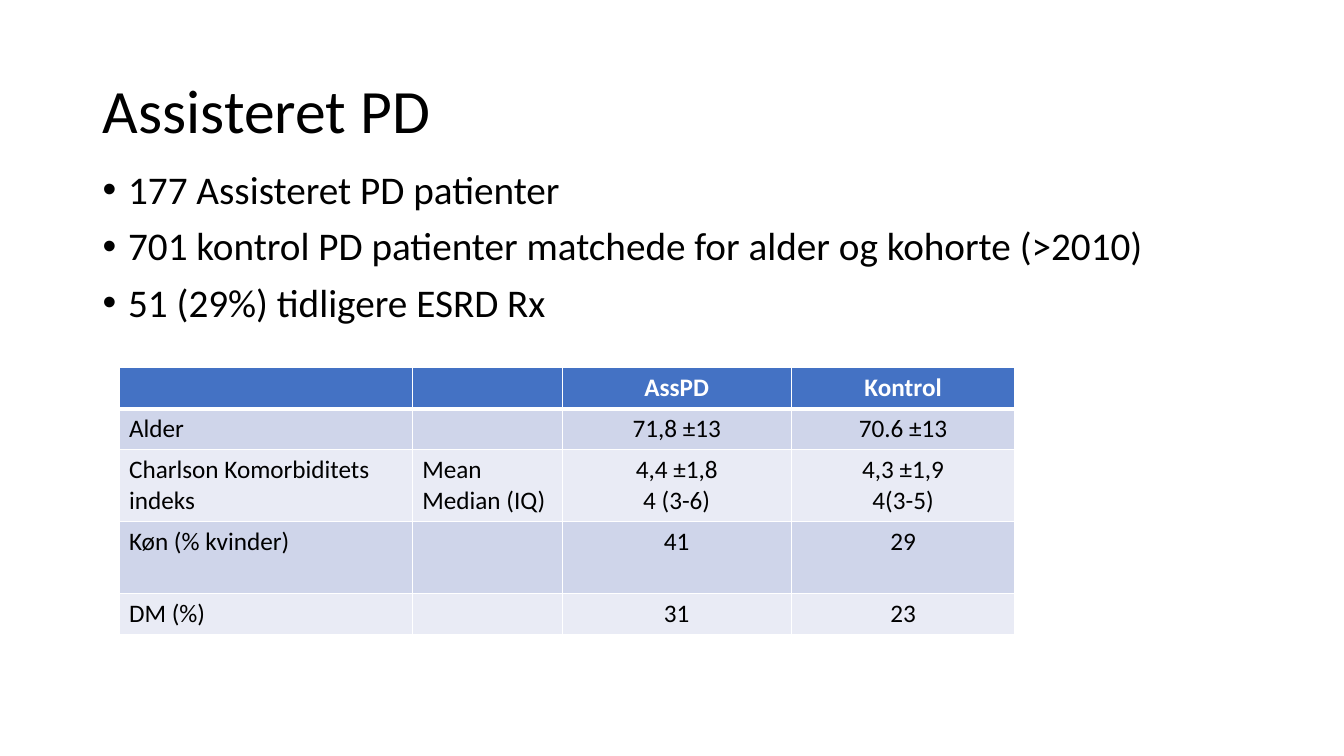
import lxml.etree
import pptx
import pptx.dml.color
import pptx.enum.text
import pptx.oxml.ns
import pptx.util

Cm = pptx.util.Cm
Pt = pptx.util.Pt
qn = pptx.oxml.ns.qn
Align = pptx.enum.text.PP_ALIGN
Anchor = pptx.enum.text.MSO_ANCHOR
SubElement = lxml.etree.SubElement

POINTS = [
    "177 Assisteret PD patienter",
    "701 kontrol PD patienter matchede for alder og kohorte (>2010)",
    "51 (29%) tidligere ESRD Rx",
]
ROWS = [
    ["", "", "AssPD", "Kontrol"],
    ["Alder", "", "71,8 ±13", "70.6 ±13"],
    ["Charlson Komorbiditets\nindeks", "Mean\nMedian (IQ)",
     "4,4 ±1,8\n4 (3-6)", "4,3 ±1,9\n4(3-5)"],
    ["Køn (% kvinder)", "", "41", "29"],
    ["DM (%)", "", "31", "23"],
]
WIDTHS = [7.39, 3.78, 5.77, 5.64]
HEIGHTS = [1.03, 1.03, 1.81, 1.81, 1.03]


def color(code):
    return pptx.dml.color.RGBColor.from_string(code)


class Deck:
    """Holds the style and the current slide."""

    font = "Calibri"
    ink = "000000"
    white = "FFFFFF"
    head = "4472C4"
    bands = ["E9EBF5", "CFD5EA"]

    def __init__(self):
        self.file = pptx.Presentation()
        self.file.slide_width = Cm(33.87)
        self.file.slide_height = Cm(19.05)
        self.slide = self.file.slides.add_slide(self.file.slide_layouts[5])

    def style(self, frame, size, ink, bold=False, align=Align.LEFT):
        for para in frame.paragraphs:
            para.alignment = align
            for font in [para.font] + [run.font for run in para.runs]:
                font.name = self.font
                font.size = Pt(size)
                font.bold = bold
                font.color.rgb = color(ink)

    def title(self, text, left, top, width, height):
        shape = self.slide.shapes.title
        shape.left, shape.top = Cm(left), Cm(top)
        shape.width, shape.height = Cm(width), Cm(height)
        frame = shape.text_frame
        frame.text = text
        frame.auto_size = pptx.enum.text.MSO_AUTO_SIZE.NONE
        frame.vertical_anchor = Anchor.MIDDLE
        frame.paragraphs[0].line_spacing = 0.9
        self.style(frame, 44, self.ink)

    def bullets(self, lines, left, top, width, height):
        box = self.slide.shapes.add_textbox(
            Cm(left), Cm(top), Cm(width), Cm(height))
        frame = box.text_frame
        frame.word_wrap = True
        frame.text = "\n".join(lines)
        self.style(frame, 28, self.ink)
        indent = Cm(0.64)
        for para in frame.paragraphs:
            para.line_spacing = 0.9
            para.space_before = Pt(10)
            props = para._p.get_or_add_pPr()
            props.set("marL", str(indent))
            props.set("indent", str(-indent))
            mark = SubElement(props, qn("a:buFont"))
            mark.set("typeface", "Arial")
            SubElement(props, qn("a:buChar")).set("char", "•")

    def edge(self, cell, side, width):
        """Add a white border; call before the cell is filled."""
        props = cell._tc.get_or_add_tcPr()
        line = SubElement(props, qn("a:ln" + side))
        line.set("w", str(Pt(width)))
        fill = SubElement(line, qn("a:solidFill"))
        SubElement(fill, qn("a:srgbClr")).set("val", self.white)

    def table(self, rows, widths, heights, left, top):
        grid = self.slide.shapes.add_table(
            len(rows), len(widths), Cm(left), Cm(top),
            Cm(sum(widths)), Cm(sum(heights))).table
        for col, width in zip(grid.columns, widths):
            col.width = Cm(width)
        for i, (row, height) in enumerate(zip(rows, heights)):
            grid.rows[i].height = Cm(height)
            top_row = i == 0
            for j, text in enumerate(row):
                cell = grid.cell(i, j)
                for side in "LRTB":
                    thick = (i, side) in [(0, "B"), (1, "T")]
                    self.edge(cell, side, 3 if thick else 1)
                cell.fill.solid()
                cell.fill.fore_color.rgb = color(
                    self.head if top_row else self.bands[i % 2])
                cell.text_frame.text = text
                self.style(cell.text_frame, 18,
                           self.white if top_row else self.ink, top_row,
                           Align.CENTER if j > 1 else Align.LEFT)


def main():
    deck = Deck()
    deck.title("Assisteret PD", 2.34, 1.02, 29.21, 3.68)
    deck.bullets(POINTS, 2.34, 4.17, 29.21, 4.45)
    deck.table(ROWS, WIDTHS, HEIGHTS, 3, 9.27)
    deck.file.save("out.pptx")


if __name__ == "__main__":
    main()
